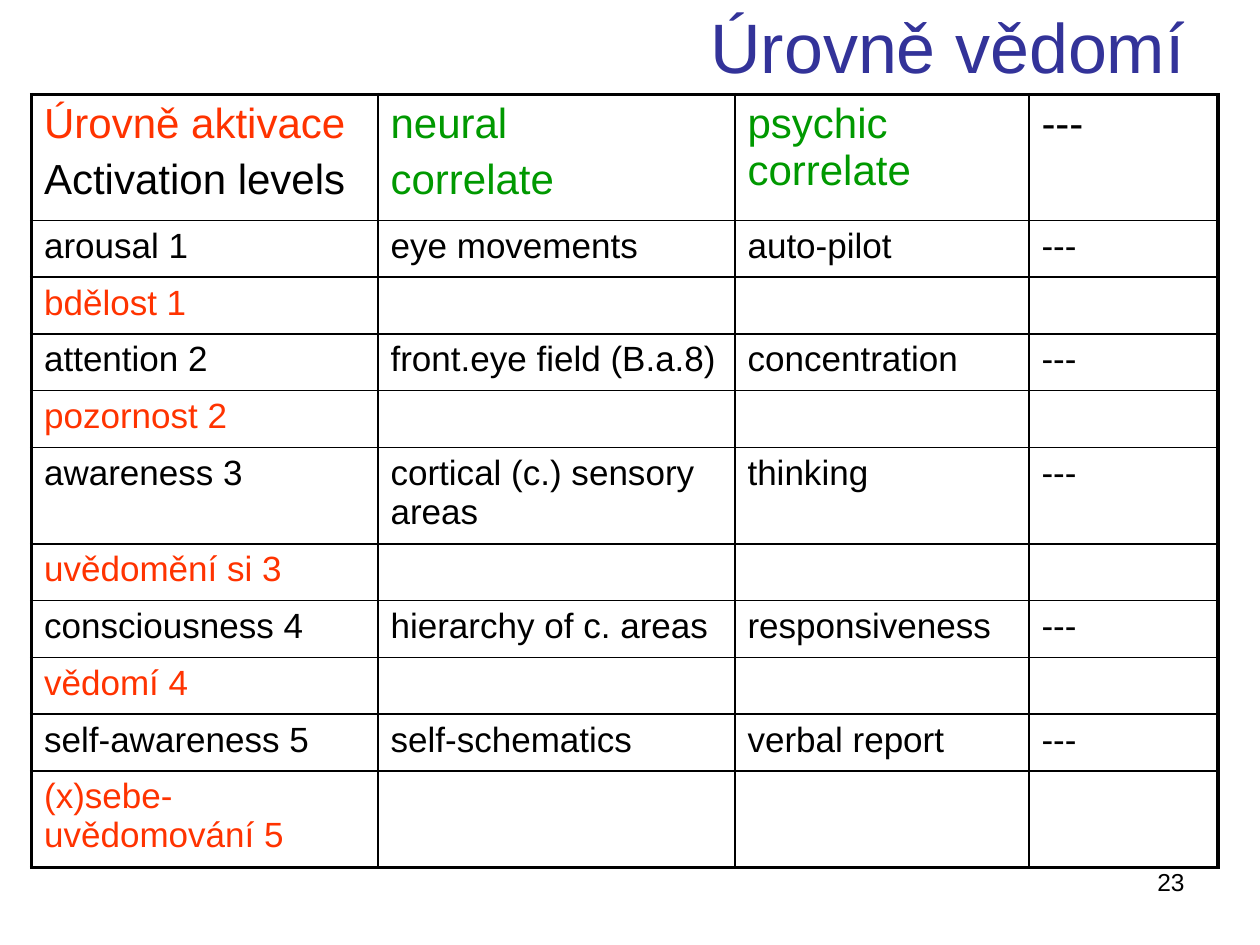
"""Build the slide on levels of consciousness."""
from lxml import etree
from pptx import Presentation
from pptx.dml.color import RGBColor
from pptx.enum.text import MSO_ANCHOR, PP_ALIGN
from pptx.oxml.ns import qn
from pptx.util import Emu, Pt

RIGHT = PP_ALIGN.RIGHT
TOP, MIDDLE = MSO_ANCHOR.TOP, MSO_ANCHOR.MIDDLE
BLACK = RGBColor(0x00, 0x00, 0x00)
NAVY = RGBColor(0x33, 0x33, 0x99)
RED = RGBColor(0xFF, 0x33, 0x00)
GREEN = RGBColor(0x00, 0x99, 0x00)

EMU_PER_PX = 7620
HEADER_SIZE, BODY_SIZE = 24, 20
THIN, THICK = 1, 2.25
COLUMN_WIDTHS = [330, 340, 280, 180]
HEADER_HEIGHT, ROW_HEIGHT, TALL_HEIGHT = 120, 54, 92

HEADER = [
    [("Úrovně aktivace", RED), ("Activation levels", BLACK)],
    [("neural", GREEN), ("correlate", GREEN)],
    [("psychic correlate", GREEN)],
    [("---", BLACK)],
]
LEVELS = [
    ("arousal 1", "eye movements", "auto-pilot", "bdělost 1"),
    ("attention 2", "front.eye field (B.a.8)", "concentration", "pozornost 2"),
    ("awareness 3", "cortical (c.) sensory areas", "thinking", "uvědomění si 3"),
    ("consciousness 4", "hierarchy of c. areas", "responsiveness", "vědomí 4"),
    ("self-awareness 5", "self-schematics", "verbal report", "(x)sebe-uvědomování 5"),
]
TALL_ROWS = (5, 10)


def px(length):
    return Emu(length * EMU_PER_PX)


class SlideBuilder:
    """Holds the text style and the current page."""

    def __init__(self, page, font="Arial"):
        self.page = page
        self.font = font

    def add_lines(self, frame, lines, size, align=None):
        for index, (text, color) in enumerate(lines):
            para = frame.add_paragraph() if index else frame.paragraphs[0]
            if index:
                para.space_before = Pt(size * 0.2)
            if align is not None:
                para.alignment = align
            span = para.add_run()
            span.text = text
            span.font.name = self.font
            span.font.size = Pt(size)
            span.font.color.rgb = color

    def text(self, left, top, width, height, text, size, color, anchor=TOP):
        box = self.page.shapes.add_textbox(px(left), px(top), px(width), px(height))
        box.text_frame.word_wrap = True
        box.text_frame.vertical_anchor = anchor
        self.add_lines(box.text_frame, [(text, color)], size, RIGHT)

    def border(self, cell, side, points):
        properties = cell._tc.get_or_add_tcPr()
        line = etree.SubElement(properties, qn(f"a:ln{side}"), w=str(Pt(points)))
        fill = etree.SubElement(line, qn("a:solidFill"))
        etree.SubElement(fill, qn("a:srgbClr"), val=str(BLACK))

    def table(self, left, top, widths, heights, rows):
        frame = self.page.shapes.add_table(
            len(heights), len(widths), px(left), px(top), px(sum(widths)), px(sum(heights)))
        table = frame.table
        table.first_row = table.horz_banding = False
        for column, width in zip(table.columns, widths):
            column.width = px(width)
        for row, height in zip(table.rows, heights):
            row.height = px(height)
        last_row, last_column = len(heights) - 1, len(widths) - 1
        for r, row in enumerate(rows):
            for c, lines in enumerate(row):
                cell = table.cell(r, c)
                outer = {"L": c == 0, "R": c == last_column, "T": r == 0, "B": r == last_row}
                for side, is_outer in outer.items():
                    self.border(cell, side, THICK if is_outer else THIN)
                cell.fill.background()
                self.add_lines(cell.text_frame, lines, BODY_SIZE if r else HEADER_SIZE)


def level_rows():
    rows = [HEADER]
    for level, neural, psychic, czech in LEVELS:
        rows.append([[(text, BLACK)] for text in (level, neural, psychic, "---")])
        rows.append([[(czech, RED)], [], [], []])
    return rows


def main():
    deck = Presentation()
    deck.slide_width, deck.slide_height = px(1200), px(900)
    builder = SlideBuilder(deck.slides.add_slide(deck.slide_layouts[6]))
    rows = level_rows()
    heights = [HEADER_HEIGHT] + [
        TALL_HEIGHT if r in TALL_ROWS else ROW_HEIGHT for r in range(1, len(rows))]
    builder.text(860, 820, 280, 62, "23", 14, BLACK)
    builder.text(600, 16, 540, 54, "Úrovně vědomí", 40, NAVY, MIDDLE)
    builder.table(30, 90, COLUMN_WIDTHS, heights, rows)
    deck.save("out.pptx")


if __name__ == "__main__":
    main()
